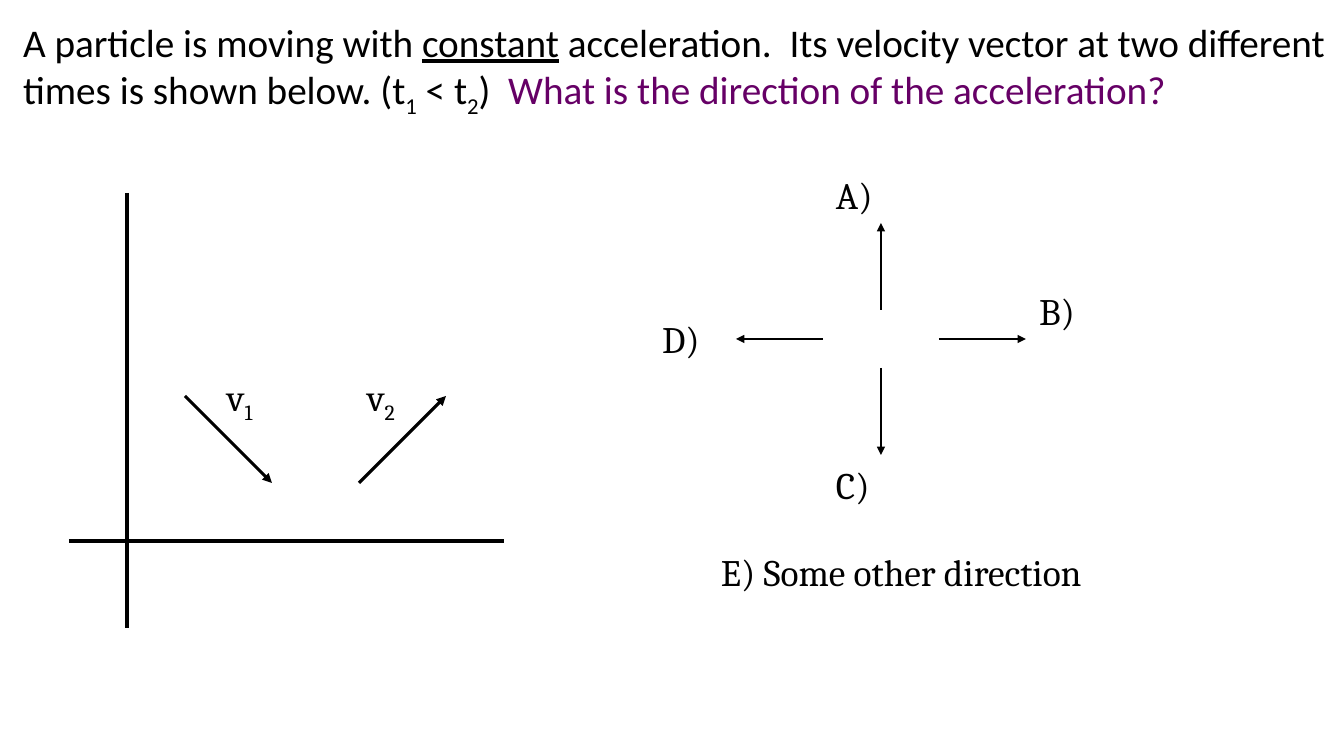
import pptx
import pptx.util
import pptx.dml.color
import pptx.enum.shapes
import pptx.enum.text
import pptx.oxml.ns
import lxml.etree

PX = 914400 / 100.8  # EMU per px
COLORS = {"ink": "000000", "question": "660066"}


def write(sp, runs, font, size, insets):
    """Fill a text shape with (text, style) runs."""
    tf = sp.text_frame
    frame = dict(word_wrap=True, auto_size=pptx.enum.text.MSO_AUTO_SIZE.NONE,
                 vertical_anchor=pptx.enum.text.MSO_ANCHOR.TOP)
    sides = ("margin_left", "margin_top", "margin_right", "margin_bottom")
    frame.update(zip(sides, (round(v * PX) for v in insets)))
    for name, value in frame.items():
        setattr(tf, name, value)
    p = tf.paragraphs[0]
    p.alignment = pptx.enum.text.PP_ALIGN.LEFT
    for text, style in runs:
        r = p.add_run()
        r.text = text
        fmt = dict(name=font, size=pptx.util.Pt(size), underline=style == "underline")
        for name, value in fmt.items():
            setattr(r.font, name, value)
        r.font.color.rgb = pptx.dml.color.RGBColor.from_string(COLORS.get(style, COLORS["ink"]))
        if style == "sub":
            r.font._element.set("baseline", "-25000")


def draw_line(ends, width, arrow):
    """Draw a straight line, with an arrowhead at its end if asked."""
    cx = slide.shapes.add_connector(pptx.enum.shapes.MSO_CONNECTOR.STRAIGHT,
                                    *(round(v * PX) for v in ends))
    cx.line.width = pptx.util.Pt(width)
    cx.line.color.rgb = pptx.dml.color.RGBColor.from_string(COLORS["ink"])
    if arrow:
        lxml.etree.SubElement(cx.line._get_or_add_ln(), pptx.oxml.ns.qn("a:tailEnd"), type="triangle")
    lxml.etree.SubElement(cx._element.spPr, pptx.oxml.ns.qn("a:effectLst"))


prs = pptx.Presentation()
prs.slide_width, prs.slide_height = round(1344 * PX), round(756 * PX)
slide = prs.slides.add_slide(prs.slide_layouts[5])

# Question
title = slide.shapes.title
for name, value in dict(left=13, top=13, width=1322, height=152).items():
    setattr(title, name, round(value * PX))
write(title, [
    ("A particle is moving with ", ""),
    ("constant", "underline"),
    (" acceleration.  Its velocity vector at two different times is shown below. (t", ""),
    ("1", "sub"),
    (" < t", ""),
    ("2", "sub"),
    (")  ", ""),
    ("What is the direction of the acceleration?", "question"),
], "Calibri", 28, (10, 5, 0, 5))

# Answer arrows, pointing away from a common centre
center_x, center_y = 881, 339
for dx, dy in [(1, 0), (0, 1), (-1, 0), (0, -1)]:
    start, end = (58, 145) if dx else (29, 116)
    draw_line((center_x + dx * start, center_y + dy * start,
               center_x + dx * end, center_y + dy * end), 1.5, True)

# Axes and velocity vectors
for ends, arrow in [
    ((69, 541, 504, 541), False),
    ((127, 193, 127, 628), False),
    ((185, 396, 272, 483), True),
    ((359, 483, 446, 396), True),
]:
    draw_line(ends, 2.25, arrow)

# Answer and vector labels
for x, y, width, runs in [
    (823, 165, 116, [("A)", "")]),
    (1026, 281, 116, [("B)", "")]),
    (823, 455, 116, [("C)", "")]),
    (649, 309, 116, [("D)", "")]),
    (708, 542, 609, [("E) Some other direction", "")]),
    (214, 367, 116, [("v", ""), ("1", "sub")]),
    (354, 367, 116, [("v", ""), ("2", "sub")]),
]:
    label = slide.shapes.add_textbox(*(round(v * PX) for v in (x, y, width, 87)))
    write(label, runs, "Cambria", 26.7, (13, 7, 13, 7))

prs.save("out.pptx")
